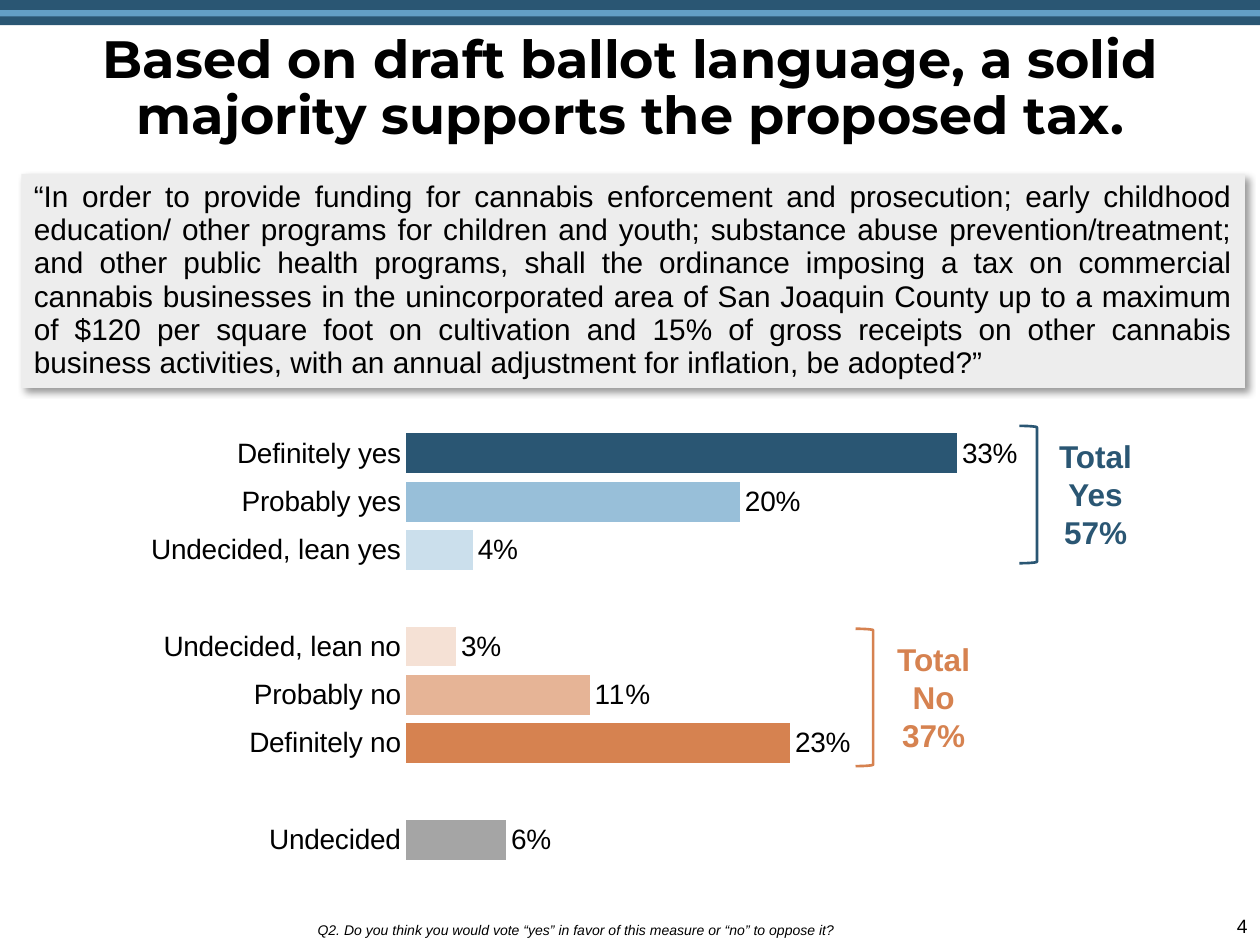
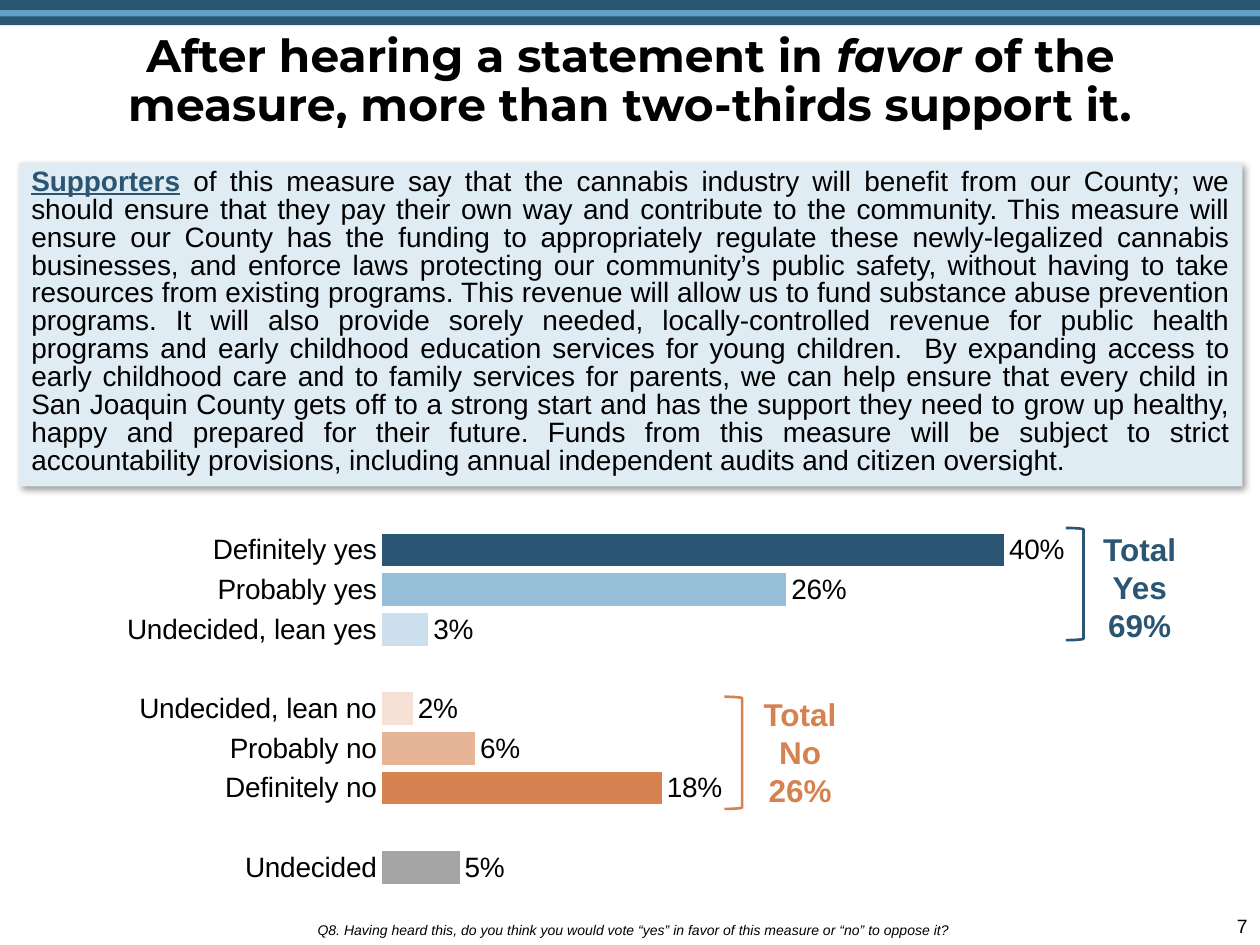
"""Build two survey slides on support for a proposed cannabis tax."""
from dataclasses import dataclass
from typing import Any, NamedTuple, Optional

from pptx import Presentation
from pptx import oxml
from pptx import util as u
from pptx.chart import data
from pptx.dml import color
from pptx.enum import chart as ch
from pptx.enum import shapes, text
from pptx.oxml import ns


@dataclass(frozen=True)
class Theme:
    """Colours, fonts and type sizes."""
    navy: str = "2A5673"
    sky: str = "639FC6"
    orange: str = "D68250"
    black: str = "000000"
    gray_panel: str = "EDEDED"
    blue_panel: str = "E0ECF4"
    bars: tuple = ("2A5673", "98BFD9", "CBDFEC", None, "F5E1D5", "E6B496", "D68250", None, "A5A5A5")
    heading: str = "Montserrat"
    body: str = "Arial"
    title_large: int = 30
    title_small: int = 26
    panel_large: int = 17
    panel_small: int = 16
    chart: int = 16
    total: int = 18
    page: int = 11
    question: int = 8


T = Theme()
ANSWERS = ("Definitely yes", "Probably yes", "Undecided, lean yes", "",
           "Undecided, lean no", "Probably no", "Definitely no", "", "Undecided")


class Box(NamedTuple):
    """Left, top, width and height."""
    x: float
    y: float
    w: float
    h: float

    def emu(self) -> list:
        """Return the four values as lengths."""
        return [u.Inches(v) for v in self]


PLOT = Box(0.31, 0.04, 0.66, 0.88)


@dataclass(frozen=True)
class Span:
    """A stretch of text with its own emphasis."""
    words: str
    color: str = T.black
    bold: bool = False
    italic: bool = False
    underline: bool = False


@dataclass(frozen=True)
class Total:
    """A bracket and the label beside it."""
    words: str
    color: str
    bracket: Box
    label: Box


@dataclass(frozen=True)
class Poll:
    """Everything that differs between the slides."""
    page: str
    title: tuple
    title_size: int
    statement: tuple
    panel: Box
    panel_color: str
    panel_size: int
    leading: int
    chart: Box
    shares: tuple
    totals: tuple
    question: str


POLLS = (
    Poll(
        page="4",
        title=(Span("Based on draft ballot language, a solid majority supports the proposed tax.", bold=True),),
        title_size=T.title_large,
        statement=(Span(
            "“In order to provide funding for cannabis enforcement and prosecution; early childhood "
            "education/ other programs for children and youth; substance abuse prevention/treatment; "
            "and other public health programs, shall the ordinance imposing a tax on commercial "
            "cannabis businesses in the unincorporated area of San Joaquin County up to a maximum "
            "of $120 per square foot on cultivation and 15% of gross receipts on other cannabis "
            "business activities, with an annual adjustment for inflation, be adopted?”"),),
        panel=Box(0.17, 1.38, 9.71, 1.7),
        panel_color=T.gray_panel,
        panel_size=T.panel_large,
        leading=19,
        chart=Box(0.42, 3.25, 9.04, 3.92),
        shares=(0.33, 0.2, 0.04, None, 0.03, 0.11, 0.23, None, 0.06),
        totals=(
            Total("Total Yes\v57%", T.navy, Box(8.09, 3.38, 0.14, 1.09), Box(8.15, 3.42, 1.09, 1.01)),
            Total("Total No\v37%", T.orange, Box(6.79, 4.99, 0.14, 1.09), Box(6.91, 5.03, 1, 1.01)),
        ),
        question="Q2. Do you think you would vote “yes” in favor of this measure or “no” to oppose it?",
    ),
    Poll(
        page="7",
        title=(Span("After hearing a statement in ", bold=True), Span("favor", bold=True, italic=True),
               Span(" of the measure, more than two-thirds support it.", bold=True)),
        title_size=T.title_small,
        statement=(
            Span("Supporters", T.navy, bold=True, underline=True),
            Span(" of this measure say that the cannabis industry will benefit from our County; we "
                 "should ensure that they pay their own way and contribute to the community. This measure "
                 "will ensure our County has the funding to appropriately regulate these newly-legalized "
                 "cannabis businesses, and enforce laws protecting our community’s public safety, without "
                 "having to take resources from existing programs. "),
            Span("This revenue will allow us to fund substance abuse prevention "
                 "programs. It will also provide sorely needed, locally-controlled revenue for public health "
                 "programs and early childhood education services for young children.  "),
            Span("By expanding access to early childhood care and to family services for parents, we can "
                 "help ensure that every child in San Joaquin County gets off to a strong start and has the "
                 "support they need to grow up healthy, happy and prepared for their future. Funds from this "
                 "measure will be subject to strict accountability provisions, including annual independent "
                 "audits and citizen oversight.")),
        panel=Box(0.15, 1.29, 9.71, 2.57),
        panel_color=T.blue_panel,
        panel_size=T.panel_small,
        leading=16,
        chart=Box(0.42, 4.08, 8.42, 3.22),
        shares=(0.4, 0.26, 0.03, None, 0.02, 0.06, 0.18, None, 0.05),
        totals=(
            Total("Total Yes\v69%", T.navy, Box(8.46, 4.19, 0.14, 0.89), Box(8.5, 4.16, 1.09, 1.01)),
            Total("Total No\v26%", T.orange, Box(5.75, 5.53, 0.14, 0.89), Box(5.85, 5.47, 1, 1.01)),
        ),
        question="Q8. Having heard this, do you think you would vote “yes” in favor of this measure "
                 "or “no” to oppose it?",
    ),
)


def rgb(value: str) -> color.RGBColor:
    """Return a colour object for a hex string."""
    return color.RGBColor.from_string(value)


def style(font: Any, size: int, name: str = T.body, span: Optional[Span] = None) -> None:
    """Set typeface, size, colour and emphasis."""
    span = span or Span("")
    font.name, font.size = name, u.Pt(size)
    font.color.rgb = rgb(span.color)
    font.bold, font.italic, font.underline = span.bold, span.italic, span.underline


def write(sp: Any, spans: tuple, size: int, align: Any, name: str = T.body,
          spacing: Any = None, anchor: Any = text.MSO_ANCHOR.TOP) -> None:
    """Fill a shape with one paragraph of styled spans."""
    tf = sp.text_frame
    tf.word_wrap, tf.auto_size, tf.vertical_anchor = True, text.MSO_AUTO_SIZE.NONE, anchor
    p = tf.paragraphs[0]
    p.alignment, p.space_before = align, u.Pt(0)
    if spacing:
        p.line_spacing = spacing
    for span in spans:
        first = len(p.runs)
        for i, words in enumerate(span.words.split("\v")):
            if i:
                p.add_line_break()
            p.add_run().text = words
        for r in p.runs[first:]:
            style(r.font, size, name, span)


def place(sp: Any, box: Box) -> None:
    """Move and size a shape."""
    sp.left, sp.top, sp.width, sp.height = box.emu()


def add_rect(s: Any, box: Box, fill: str) -> Any:
    """Add a flat rectangle."""
    sp = s.shapes.add_shape(shapes.MSO_SHAPE.RECTANGLE, *box.emu())
    sp.shadow.inherit = False
    sp.fill.solid()
    sp.fill.fore_color.rgb = rgb(fill)
    sp.line.fill.background()
    return sp


def add_frame(s: Any, poll: Poll) -> None:
    """Add the bands, page number, title and question."""
    add_rect(s, Box(0, 0, 10, 0.2), T.navy)
    add_rect(s, Box(0, 0.08, 10, 0.05), T.sky)
    page = s.shapes.add_textbox(*Box(8.52, 7.21, 1.48, 0.29).emu())
    write(page, (Span(poll.page),), T.page, text.PP_ALIGN.RIGHT)
    place(s.shapes.title, Box(0.15, 0.21, 9.71, 1.25))
    write(s.shapes.title, poll.title, poll.title_size, text.PP_ALIGN.CENTER, T.heading, 0.9)
    body = s.placeholders[1]
    place(body, Box(2.42, 7.06, 7.29, 0.44))
    pPr = body.text_frame.paragraphs[0]._p.get_or_add_pPr()
    pPr.set("marL", "0")
    pPr.set("indent", "0")
    pPr.append(oxml.parse_xml(f"<a:buNone {ns.nsdecls('a')}/>"))
    write(body, (Span(poll.question, italic=True),), T.question, text.PP_ALIGN.LEFT,
          spacing=0.9, anchor=text.MSO_ANCHOR.BOTTOM)


def add_panel(s: Any, poll: Poll) -> None:
    """Add the shadowed statement panel."""
    sp = add_rect(s, poll.panel, poll.panel_color)
    sp._element.spPr.find(ns.qn("a:effectLst")).append(oxml.parse_xml(
        f"<a:outerShdw {ns.nsdecls('a')} blurRad='{u.Pt(4)}' dist='{u.Pt(3)}' dir='2700000' "
        f"algn='tl' rotWithShape='0'><a:srgbClr val='{T.black}'><a:alpha val='40000'/>"
        "</a:srgbClr></a:outerShdw>"))
    write(sp, poll.statement, poll.panel_size, text.PP_ALIGN.JUSTIFY, spacing=u.Pt(poll.leading))


def set_plot_layout(chart: Any, box: Box) -> None:
    """Fix the inner plot area as fractions of the chart."""
    area = chart._chartSpace.chart.plotArea
    for old in area.findall(ns.qn("c:layout")):
        area.remove(old)
    values = "".join(f"<c:{k} val='{v}'/>" for k, v in zip("xywh", box))
    area.insert(0, oxml.parse_xml(
        f"<c:layout {ns.nsdecls('c')}><c:manualLayout><c:layoutTarget val='inner'/>"
        f"<c:xMode val='edge'/><c:yMode val='edge'/>{values}</c:manualLayout></c:layout>"))


def add_bars(s: Any, poll: Poll) -> None:
    """Add the bar chart of answers."""
    cd = data.CategoryChartData(number_format="0%")
    cd.categories = ANSWERS
    cd.add_series("Series 1", poll.shares)
    chart = s.shapes.add_chart(ch.XL_CHART_TYPE.BAR_CLUSTERED, *poll.chart.emu(), cd).chart
    chart.has_legend = chart.has_title = False
    style(chart.font, T.chart)
    set_plot_layout(chart, PLOT)
    cat, val = chart.category_axis, chart.value_axis
    cat.reverse_order = True
    cat.major_tick_mark = cat.minor_tick_mark = ch.XL_TICK_MARK.NONE
    cat.format.line.fill.background()
    style(cat.tick_labels.font, T.chart)
    val.minimum_scale, val.maximum_scale, val.major_unit = 0, 0.45, 0.15
    val.has_major_gridlines = val.visible = False
    plot = chart.plots[0]
    plot.gap_width, plot.vary_by_categories = 21, False
    series = plot.series[0]
    series.format.fill.solid()
    series.format.fill.fore_color.rgb = rgb(T.navy)
    for i, tint in enumerate(T.bars):
        if tint:
            fill = series.points[i].format.fill
            fill.solid()
            fill.fore_color.rgb = rgb(tint)
    labels = series.data_labels
    labels.show_value = True
    labels.number_format, labels.number_format_is_linked = "0%", False
    labels.position = ch.XL_LABEL_POSITION.OUTSIDE_END
    style(labels.font, T.chart)


def add_total(s: Any, total: Total) -> None:
    """Add a bracket with its total."""
    sp = s.shapes.add_shape(shapes.MSO_SHAPE.RIGHT_BRACKET, *total.bracket.emu())
    sp.shadow.inherit = False
    sp.fill.background()
    sp.line.color.rgb, sp.line.width = rgb(total.color), u.Pt(1.5)
    label = s.shapes.add_textbox(*total.label.emu())
    write(label, (Span(total.words, total.color, bold=True),), T.total, text.PP_ALIGN.CENTER)


def main() -> None:
    """Build and save the presentation."""
    prs = Presentation()
    prs.slide_width, prs.slide_height = u.Inches(10), u.Inches(7.5)
    for poll in POLLS:
        s = prs.slides.add_slide(prs.slide_layouts[1])
        add_frame(s, poll)
        add_bars(s, poll)
        for total in poll.totals:
            add_total(s, total)
        add_panel(s, poll)
    prs.save("out.pptx")


if __name__ == "__main__":
    main()
